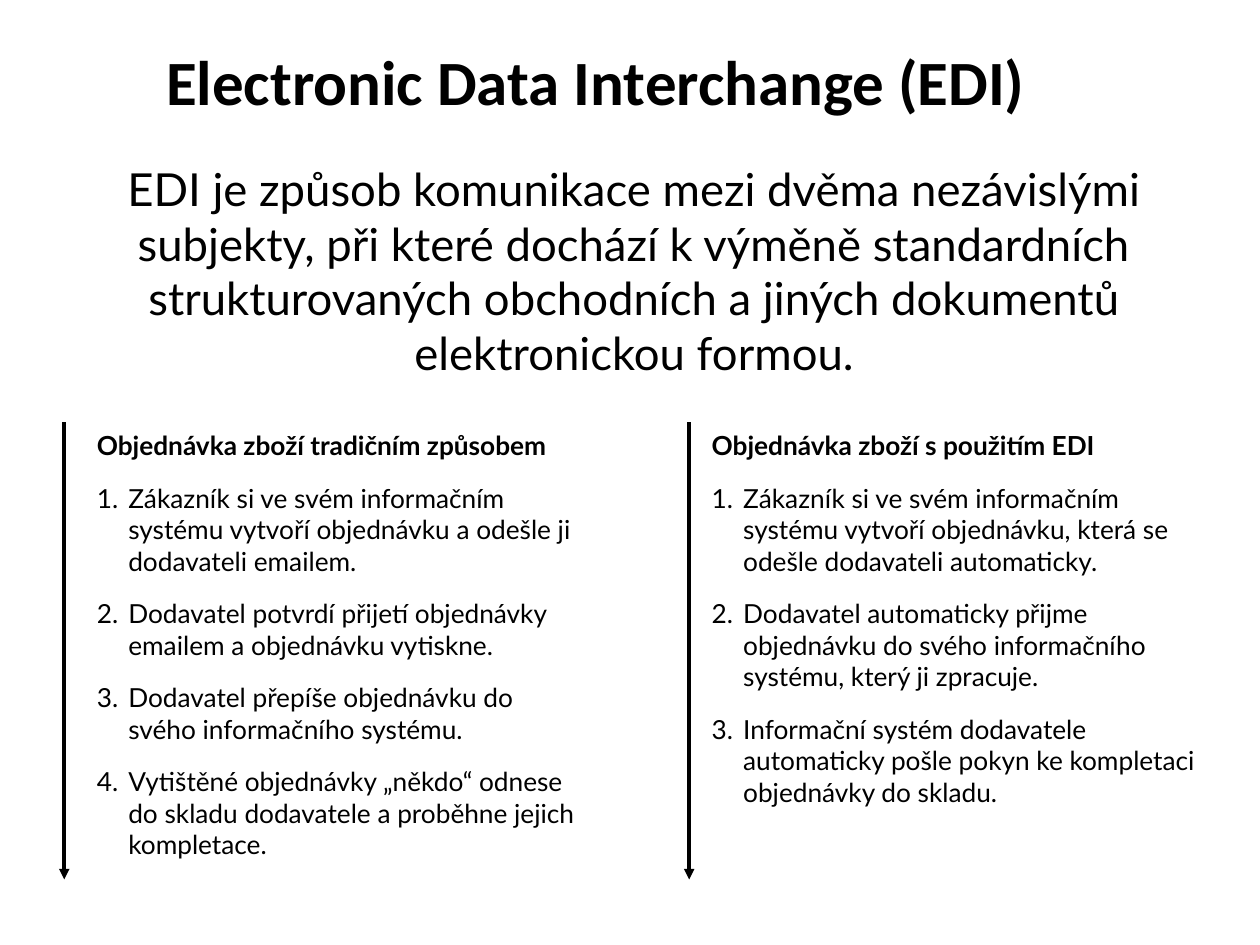
from dataclasses import dataclass

import pptx
import pptx.dml.color
import pptx.enum.shapes
import pptx.enum.text
import pptx.oxml.ns
import pptx.util
from lxml import etree

qn = pptx.oxml.ns.qn
ALIGN = pptx.enum.text.PP_ALIGN


@dataclass(frozen=True)
class Theme:
    ink: str = "000000"
    paper: str = "FFFFFF"
    title_font: str = "Calibri"
    body_font: str = "Lato"
    title_size: int = 36
    lead_size: int = 26
    step_size: int = 15
    step_gap: int = 12
    step_indent: float = 0.25
    arrow_width: int = 2


class Deck:
    """Holds the theme and the current slide; lengths are shares of the slide."""

    def __init__(self, theme, width, height):
        self.theme = theme
        self.presentation = pptx.Presentation()
        self.presentation.slide_width = pptx.util.Inches(width)
        self.presentation.slide_height = pptx.util.Inches(height)
        self.slide = self.presentation.slides.add_slide(self.presentation.slide_layouts[6])

    def x(self, share):
        return round(self.presentation.slide_width * share)

    def y(self, share):
        return round(self.presentation.slide_height * share)

    def place(self, left, top, width, height):
        return self.x(left), self.y(top), self.x(width), self.y(height)

    def colour(self, value):
        return pptx.dml.color.RGBColor.from_string(value)

    def add_text(self, paragraph, text, size, font, bold=False):
        run = paragraph.add_run()
        run.text = text
        run.font.size = pptx.util.Pt(size)
        run.font.name = font
        run.font.bold = bold
        run.font.color.rgb = self.colour(self.theme.ink)

    def text_frame(self, box):
        frame = self.slide.shapes.add_textbox(*self.place(*box)).text_frame
        frame.word_wrap = True
        return frame

    def title(self, text, box):
        banner = self.slide.shapes.add_shape(
            pptx.enum.shapes.MSO_SHAPE.RECTANGLE, *self.place(*box))
        banner.shadow.inherit = False
        banner.fill.solid()
        banner.fill.fore_color.rgb = self.colour(self.theme.paper)
        banner.line.fill.background()
        banner.text_frame.word_wrap = True
        banner.text_frame.vertical_anchor = pptx.enum.text.MSO_ANCHOR.TOP
        heading = banner.text_frame.paragraphs[0]
        heading.alignment = ALIGN.LEFT
        self.add_text(heading, text, self.theme.title_size, self.theme.title_font, bold=True)

    def lead(self, text, box):
        definition = self.text_frame(box).paragraphs[0]
        definition.alignment = ALIGN.CENTER
        self.add_text(definition, text, self.theme.lead_size, self.theme.body_font)

    def number(self, paragraph):
        """Give the paragraph an automatic number with a hanging indent."""
        indent = pptx.util.Inches(self.theme.step_indent)
        properties = paragraph._p.get_or_add_pPr()
        properties.set("marL", str(indent))
        properties.set("indent", str(-indent))
        etree.SubElement(properties, qn("a:buFont"), typeface="+mj-lt")
        etree.SubElement(properties, qn("a:buAutoNum"), type="arabicPeriod")

    def procedure(self, heading, steps, box):
        frame = self.text_frame(box)
        for position, text in enumerate([heading, *steps]):
            paragraph = frame.add_paragraph() if position else frame.paragraphs[0]
            paragraph.space_after = pptx.util.Pt(self.theme.step_gap)
            if position:
                self.number(paragraph)
            self.add_text(paragraph, text, self.theme.step_size, self.theme.body_font,
                          bold=position == 0)

    def down_arrow(self, left, top, bottom):
        arrow = self.slide.shapes.add_connector(
            pptx.enum.shapes.MSO_CONNECTOR.STRAIGHT,
            self.x(left), self.y(top), self.x(left), self.y(bottom))
        arrow.line.color.rgb = self.colour(self.theme.ink)
        arrow.line.width = pptx.util.Pt(self.theme.arrow_width)
        etree.SubElement(arrow.line._get_or_add_ln(), qn("a:tailEnd"), type="triangle")
        etree.SubElement(arrow._element.spPr, qn("a:effectLst"))

    def save(self):
        self.presentation.save("out.pptx")


TRADITIONAL_STEPS = [
    "Zákazník si ve svém informačním systému vytvoří objednávku a odešle ji dodavateli emailem.",
    "Dodavatel potvrdí přijetí objednávky emailem a objednávku vytiskne.",
    "Dodavatel přepíše objednávku do svého informačního systému.",
    "Vytištěné objednávky „někdo“ odnese do skladu dodavatele a proběhne jejich kompletace.",
]
EDI_STEPS = [
    "Zákazník si ve svém informačním systému vytvoří objednávku, která se odešle "
    "dodavateli automaticky.",
    "Dodavatel automaticky přijme objednávku do svého informačního systému, který ji zpracuje.",
    "Informační systém dodavatele automaticky pošle pokyn ke kompletaci objednávky do skladu.",
]
# heading, steps, left edge of the text, its height, position of the arrow
PROCEDURES = [
    ("Objednávka zboží tradičním způsobem", TRADITIONAL_STEPS, 0.067, 3.55 / 7.5, 0.051),
    ("Objednávka zboží s použitím EDI", EDI_STEPS, 0.555, 3.13 / 7.5, 0.547),
]


def main():
    deck = Deck(Theme(), 10, 7.5)
    deck.title("Electronic Data Interchange (EDI)", (0.122, 0.29 / 7.5, 0.764, 0.71 / 7.5))
    deck.lead(
        "EDI je způsob komunikace mezi dvěma nezávislými subjekty, při které dochází "
        "k výměně standardních strukturovaných obchodních a jiných dokumentů "
        "elektronickou formou.",
        (0.048, 1.23 / 7.5, 0.911, 1.85 / 7.5))
    for heading, steps, left, height, _ in PROCEDURES:
        deck.procedure(heading, steps, (left, 3.36 / 7.5, 0.409, height))
    for *_, arrow_left in PROCEDURES:
        deck.down_arrow(arrow_left, 3.35 / 7.5, 6.98 / 7.5)
    deck.save()


if __name__ == "__main__":
    main()
